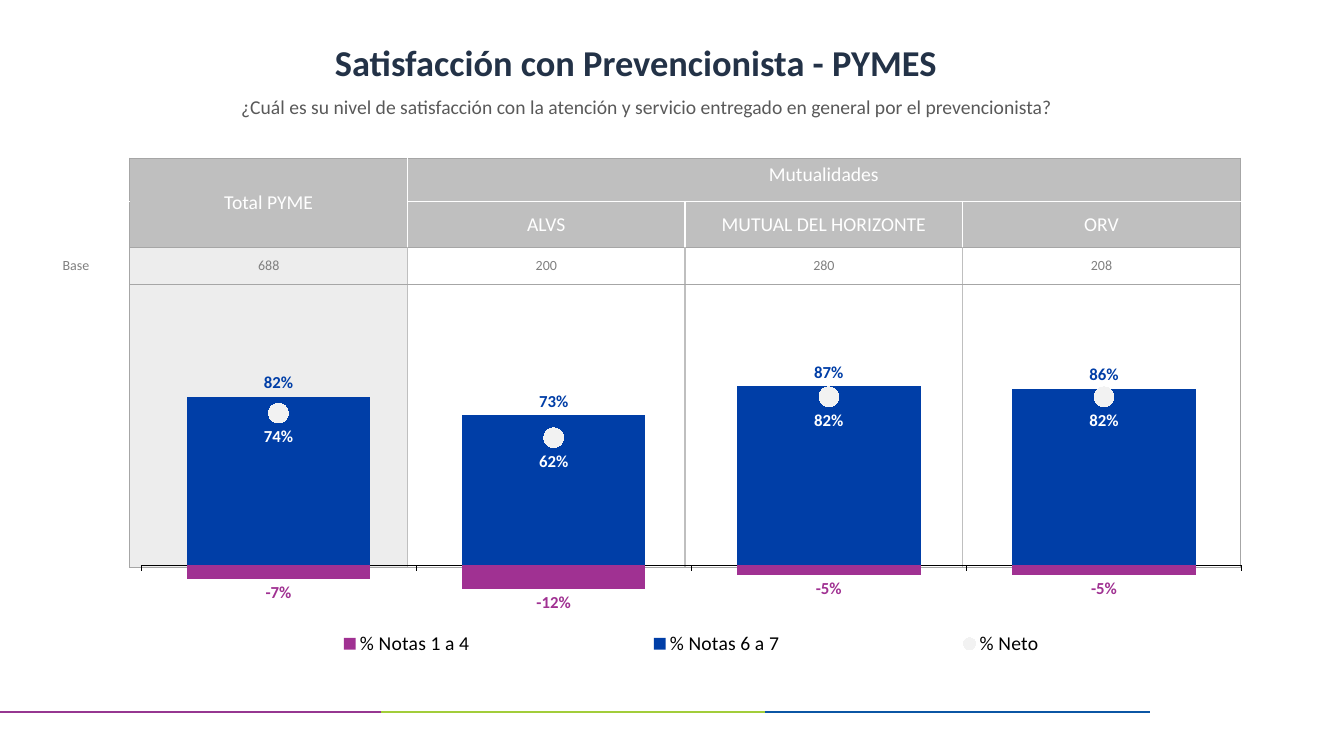
from pptx import Presentation
from pptx import util as u
from pptx.chart import data
from pptx.dml import color
from pptx.enum import chart as ch, shapes, text
from pptx.oxml import ns, parse_xml

GREY, LIGHT, WHITE = "A6A6A6", "BFBFBF", "FFFFFF"
PURPLE, BLUE = "A03192", "003EA7"


def rgb(value):
    return color.RGBColor.from_string(value)


def write(frame, words, size, hue, bold=False):
    paragraph = frame.paragraphs[0]
    paragraph.alignment = text.PP_ALIGN.CENTER
    run = paragraph.add_run()
    run.text = words
    run.font.size, run.font.name, run.font.bold = u.Pt(size), "Calibri", bold
    run.font.color.rgb = rgb(hue)
    return paragraph


deck = Presentation()
deck.slide_width, deck.slide_height = u.Pt(960), u.Pt(540)
slide = deck.slides.add_slide(deck.slide_layouts[5])

for start, end, hue in [(0, 274.5, "963791"), (272, 546.5, "A2CD3A"), (546.5, 821.5, "0B56A4")]:
    stripe = slide.shapes.add_connector(
        shapes.MSO_CONNECTOR.STRAIGHT, u.Pt(start), u.Pt(508.5), u.Pt(end), u.Pt(508.5))
    stripe.line.color.rgb = rgb(hue)
    stripe.line.width = u.Pt(1.5)
    stripe._element.spPr.append(parse_xml(f"<a:effectLst {ns.nsdecls('a')}/>"))

heading = slide.shapes.title
heading.left, heading.top, heading.width, heading.height = u.Pt(66), u.Pt(24), u.Pt(777), u.Pt(44)
heading.text_frame.vertical_anchor = text.MSO_ANCHOR.MIDDLE
write(heading.text_frame, "Satisfacción con Prevencionista - PYMES", 26, "233247", True).line_spacing = 0.9

question = slide.shapes.add_textbox(u.Pt(73.5), u.Pt(64), u.Pt(777), u.Pt(24.5)).text_frame
question.word_wrap = True
write(question, "¿Cuál es su nivel de satisfacción con la atención y servicio entregado "
      "en general por el prevencionista?", 14, "595959")

rows = [
    ["", "Total PYME", "Mutualidades", "", ""],
    ["", "", "ALVS", "MUTUAL DEL HORIZONTE", "ORV"],
    ["Base", "688", "200", "280", "208"],
    ["", "", "", "", ""],
]
bases = slide.shapes.add_table(4, 5, u.Pt(15.8), u.Pt(113), u.Pt(870.5), u.Pt(292.5)).table
bases.first_row = bases.horz_banding = False
for column, width in zip(bases.columns, [77, 198.3, 198.3, 198.3, 198.3]):
    column.width = u.Pt(width)
for row, height in zip(bases.rows, [31, 33, 26, 202.5]):
    row.height = u.Pt(height)
bases.cell(0, 1).merge(bases.cell(1, 1))
bases.cell(0, 2).merge(bases.cell(0, 4))

for r, row in enumerate(rows):
    for c, words in enumerate(row):
        cell = bases.cell(r, c)
        header = r < 2
        if c == 0:
            fill, borders = None, [WHITE, GREY, WHITE, WHITE]
        else:
            fill = LIGHT if header else "EDEDED" if c == 1 else None
            inner = WHITE if header else LIGHT
            borders = [
                GREY if c == 1 else inner,
                GREY if c == 4 or (r, c) == (0, 2) else inner,
                WHITE if r == 1 and c > 1 else GREY,
                WHITE if r == 0 and c > 1 else GREY,
            ]
        if fill:
            cell.fill.solid()
            cell.fill.fore_color.rgb = rgb(fill)
        else:
            cell.fill.background()
        for place, (side, hue) in enumerate(zip("LRTB", borders)):
            cell._tc.get_or_add_tcPr().insert(place, parse_xml(
                f'<a:ln{side} w="12700" {ns.nsdecls("a")}><a:solidFill>'
                f'<a:srgbClr val="{hue}"/></a:solidFill></a:ln{side}>'))
        if words != "Mutualidades":
            cell.vertical_anchor = text.MSO_ANCHOR.MIDDLE
        if r == 2:
            cell.margin_left = cell.margin_right = u.Pt(1)
            cell.margin_top = cell.margin_bottom = u.Pt(0)
        if words:
            write(cell.text_frame, words, 14 if header else 10, WHITE if header else "808080")

scores = data.CategoryChartData(number_format="0%")
scores.categories = ["1", "2", "3", "4"]
scores.add_series("% Notas 1 a 4", [-0.07, -0.12, -0.05, -0.05])
scores.add_series("% Notas 6 a 7", [0.82, 0.73, 0.87, 0.86])
scores.add_series("% Neto", [0.74, 0.62, 0.82, 0.82])
satisfaction = slide.shapes.add_chart(
    ch.XL_CHART_TYPE.COLUMN_CLUSTERED, u.Pt(66.2), u.Pt(223.2), u.Pt(820.8), u.Pt(316.8), scores).chart
satisfaction.has_title = False
satisfaction.font.name = "TeX Gyre Adventor"
satisfaction.font.size = u.Pt(13.7)
satisfaction.font.bold = True
satisfaction.font.color.rgb = rgb("000000")

columns = satisfaction.plots[0]
columns.gap_width, columns.overlap, columns.vary_by_categories = 50, 100, False
bars = columns._element
net_line = parse_xml(
    f'<c:lineChart {ns.nsdecls("c")}><c:grouping val="standard"/><c:varyColors val="0"/>'
    '<c:marker val="1"/></c:lineChart>')
net_xml = bars.findall(ns.qn("c:ser"))[2]
for inversion in net_xml.findall(ns.qn("c:invertIfNegative")):
    net_xml.remove(inversion)
net_line.insert(2, net_xml)
for axis_id in bars.findall(ns.qn("c:axId")):
    net_line.append(parse_xml(f'<c:axId {ns.nsdecls("c")} val="{axis_id.get("val")}"/>'))
bars.addnext(net_line)

low, high = columns.series
net = satisfaction.plots[1].series[0]
net.smooth = False
net.format.line.fill.background()
net.marker.style, net.marker.size = ch.XL_MARKER_STYLE.CIRCLE, 14
net.marker.format.fill.solid()
net.marker.format.fill.fore_color.rgb = rgb("F2F2F2")
net.marker.format.line.fill.background()
for grade, hue in [(low, PURPLE), (high, BLUE)]:
    grade.invert_if_negative = False
    grade.format.fill.solid()
    grade.format.fill.fore_color.rgb = rgb(hue)

outside, below = ch.XL_LABEL_POSITION.OUTSIDE_END, ch.XL_LABEL_POSITION.BELOW
for grade, hue, position in [(low, PURPLE, outside), (high, BLUE, outside), (net, WHITE, below)]:
    labels = grade.data_labels
    labels.show_value, labels.position = True, position
    labels.number_format, labels.number_format_is_linked = "0%", False
    labels.font.name, labels.font.size, labels.font.bold = "Calibri", u.Pt(12), True
    labels.font.color.rgb = rgb(hue)

baseline = satisfaction.category_axis
baseline.tick_label_position = ch.XL_TICK_LABEL_POSITION.NONE
baseline.major_tick_mark = ch.XL_TICK_MARK.OUTSIDE
baseline.format.line.color.rgb = rgb("000000")
baseline.format.line.width = u.Pt(0.25)
percent = satisfaction.value_axis
percent.minimum_scale, percent.maximum_scale, percent.major_unit = -0.6, 1, 0.2
percent.has_major_gridlines = percent.visible = False

satisfaction.has_legend = True
legend = satisfaction.legend
legend.position = ch.XL_LEGEND_POSITION.LEFT
legend.include_in_layout = False
legend.font.name, legend.font.size, legend.font.bold = "Calibri", u.Pt(14), False
legend.font.color.rgb = rgb("000000")

for area, place, target, x, y, w, h in [
    (net_line.getparent(), 0, '<c:layoutTarget val="inner"/>', 0.042, 0.107, 0.958, 0.739),
    (legend._element, 1, "", 0.064, 0.707, 0.914, 0.08),
]:
    for automatic in area.findall(ns.qn("c:layout")):
        area.remove(automatic)
    area.insert(place, parse_xml(
        f'<c:layout {ns.nsdecls("c")}><c:manualLayout>{target}'
        f'<c:xMode val="edge"/><c:yMode val="edge"/><c:x val="{x}"/><c:y val="{y}"/>'
        f'<c:w val="{w}"/><c:h val="{h}"/></c:manualLayout></c:layout>'))

deck.save("out.pptx")
